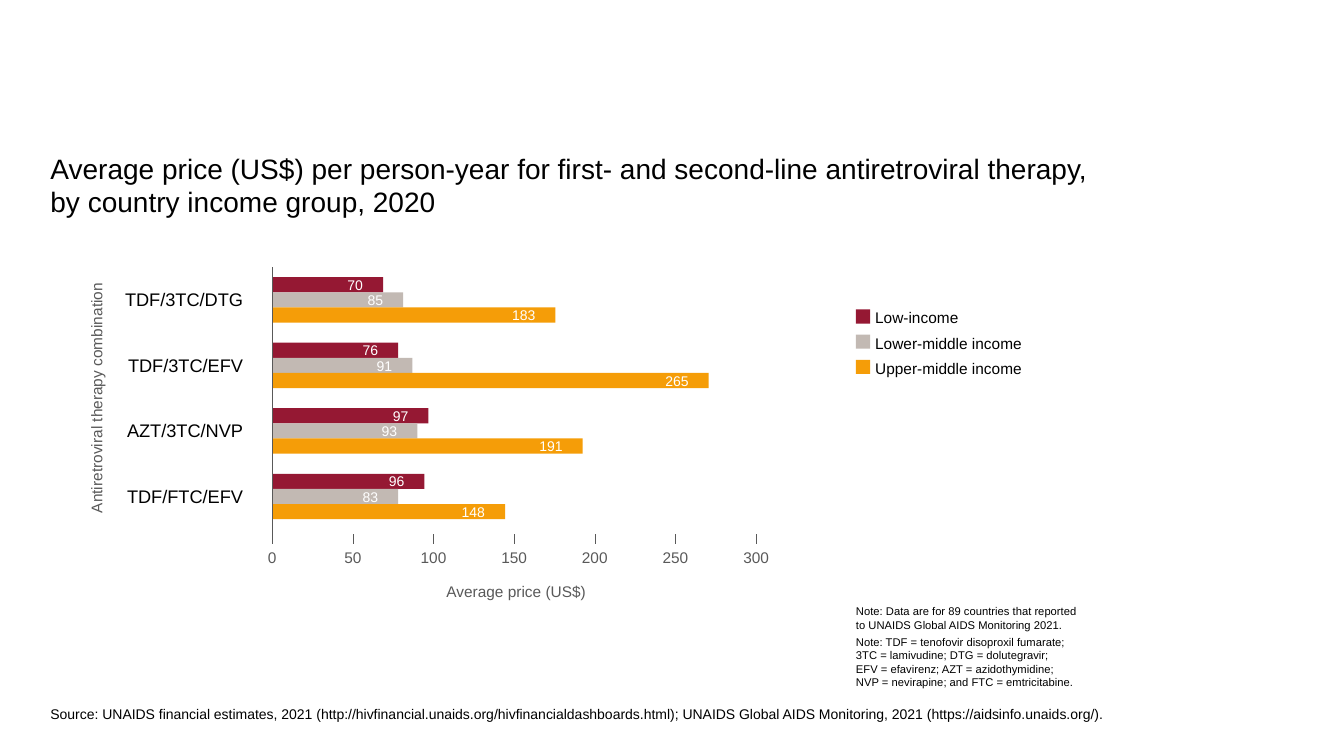
from dataclasses import dataclass

from lxml import etree
from pptx import Presentation
from pptx.dml.color import RGBColor
from pptx.enum.shapes import MSO_CONNECTOR, MSO_SHAPE
from pptx.enum.text import MSO_ANCHOR, MSO_AUTO_SIZE, PP_ALIGN
from pptx.oxml.ns import qn
from pptx.util import Inches, Pt

LEFT, CENTER, RIGHT = PP_ALIGN.LEFT, PP_ALIGN.CENTER, PP_ALIGN.RIGHT
TOP, MIDDLE = MSO_ANCHOR.TOP, MSO_ANCHOR.MIDDLE
RECTANGLE = MSO_SHAPE.RECTANGLE
STRAIGHT = MSO_CONNECTOR.STRAIGHT

FONT = "Arial"
COLORS = {
    "low": "951833",
    "lower_middle": "C2B9B3",
    "upper_middle": "F59D08",
    "text": "000000",
    "axis": "595959",
    "value": "FFFFFF",
}

CELL = 0.05
AXIS_COLUMN = 54
AXIS_TOP, TICK_TOP, AXIS_BOTTOM = 53, 106, 108
TICK_COLUMNS = 16
FIRST_BAR_ROW, CATEGORY_ROWS, BAR_ROWS = 55, 13, 3
LEGEND_ROW, LEGEND_ROWS = 61, 5
SIDE_COLUMN = 169.8


@dataclass(frozen=True)
class Area:
    column: float
    row: float
    columns: float
    rows: float


@dataclass(frozen=True)
class Style:
    size: float
    color: str = "text"
    align: PP_ALIGN = LEFT
    anchor: MSO_ANCHOR = TOP
    spacing: float | None = None
    right_inset: float = 0


@dataclass(frozen=True)
class IncomeGroup:
    name: str
    color: str


@dataclass(frozen=True)
class Therapy:
    name: str
    prices: tuple[int, int, int]
    bar_columns: tuple[float, float, float]


@dataclass(frozen=True)
class Label:
    area: Area
    lines: tuple[str, ...]
    style: Style


TITLE = Label(
    Area(10, 30, 250, 20),
    (
        "Average price (US$) per person-year for first- and second-line antiretroviral therapy,",
        "by country income group, 2020",
    ),
    Style(20),
)
GROUPS = (
    IncomeGroup("Low-income", "low"),
    IncomeGroup("Lower-middle income", "lower_middle"),
    IncomeGroup("Upper-middle income", "upper_middle"),
)
THERAPIES = (
    Therapy("TDF/3TC/DTG", (70, 85, 183), (22, 26, 56.2)),
    Therapy("TDF/3TC/EFV", (76, 91, 265), (25, 27.8, 86.6)),
    Therapy("AZT/3TC/NVP", (97, 93, 191), (31, 28.8, 61.6)),
    Therapy("TDF/FTC/EFV", (96, 83, 148), (30.2, 25, 46.2)),
)
VALUE = Style(10, "value", RIGHT, MIDDLE, right_inset=4)
CATEGORY = Style(13, "text", RIGHT, MIDDLE, 14)
LEGEND = Style(11, spacing=14)
TICK = Style(11, "axis", CENTER, spacing=11)
VERTICAL_TITLE = Label(
    Area(15.2, 55, 7.6, 48),
    ("Antiretroviral therapy combination",),
    Style(11, "axis", CENTER, MIDDLE, 14),
)
LABELS = (
    Label(Area(84.4, 115.4, 36, 3.8), ("Average price (US$)",), Style(11, "axis", CENTER)),
    Label(
        Area(SIDE_COLUMN, 120, 44.8, 5.4),
        ("Note: Data are for 89 countries that reported to UNAIDS Global AIDS Monitoring 2021.",),
        Style(8),
    ),
    Label(
        Area(SIDE_COLUMN, 126, 43.4, 10.8),
        (
            "Note: TDF = tenofovir disoproxil fumarate; 3TC = lamivudine; DTG = dolutegravir;",
            "EFV = efavirenz; AZT = azidothymidine; NVP = nevirapine; and FTC = emtricitabine.",
        ),
        Style(8),
    ),
    Label(
        Area(10, 140, 240, 3.4),
        (
            "Source: UNAIDS financial estimates, 2021 "
            "(http://hivfinancial.unaids.org/hivfinancialdashboards.html); "
            "UNAIDS Global AIDS Monitoring, 2021 (https://aidsinfo.unaids.org/).",
        ),
        Style(10),
    ),
)


def grid(cells: float) -> int:
    return Inches(cells * CELL)


def bounds(area: Area) -> tuple[int, int, int, int]:
    return grid(area.column), grid(area.row), grid(area.columns), grid(area.rows)


def color(name: str) -> RGBColor:
    return RGBColor.from_string(COLORS[name])


def write(shape, lines: tuple[str, ...], style: Style) -> None:
    frame = shape.text_frame
    frame.margin_left = frame.margin_top = frame.margin_bottom = 0
    frame.margin_right = grid(style.right_inset)
    frame.word_wrap = True
    frame.auto_size = MSO_AUTO_SIZE.NONE
    frame.vertical_anchor = style.anchor
    frame.text = "\n".join(lines)
    for paragraph in frame.paragraphs:
        paragraph.alignment = style.align
        if style.spacing:
            paragraph.line_spacing = Pt(style.spacing)
        paragraph.font.name = FONT
        paragraph.font.size = Pt(style.size)
        paragraph.font.color.rgb = color(style.color)


def add_text(page, label: Label):
    box = page.shapes.add_textbox(*bounds(label.area))
    write(box, label.lines, label.style)
    return box


def add_block(page, area: Area, fill: str):
    block = page.shapes.add_shape(RECTANGLE, *bounds(area))
    block.shadow.inherit = False
    block.fill.solid()
    block.fill.fore_color.rgb = color(fill)
    block.line.fill.background()
    return block


def add_rule(page, column: float, top: float, bottom: float) -> None:
    rule = page.shapes.add_connector(STRAIGHT, grid(column), grid(top), grid(column), grid(bottom))
    rule.line.color.rgb = color("axis")
    rule.line.width = Pt(0.25)
    etree.SubElement(rule._element.spPr, qn("a:effectLst"))


def add_title(page) -> None:
    title = page.shapes.title
    title.left, title.top, title.width, title.height = bounds(TITLE.area)
    write(title, TITLE.lines, TITLE.style)


def add_bars(page) -> None:
    for index, therapy in enumerate(THERAPIES):
        row = FIRST_BAR_ROW + index * CATEGORY_ROWS
        add_text(page, Label(Area(20, row + 2.6, 28.2, 4), (therapy.name,), CATEGORY))
        bars = zip(GROUPS, therapy.prices, therapy.bar_columns)
        for order, (group, price, columns) in enumerate(bars):
            area = Area(AXIS_COLUMN, row + order * BAR_ROWS, columns, BAR_ROWS)
            write(add_block(page, area, group.color), (str(price),), VALUE)


def add_axes(page) -> None:
    for index, price in enumerate(range(0, 301, 50)):
        column = AXIS_COLUMN + index * TICK_COLUMNS
        add_rule(page, column, TICK_TOP if index else AXIS_TOP, AXIS_BOTTOM)
        add_text(page, Label(Area(column - 4, 109.4, 8, 3), (str(price),), TICK))
    box = add_text(page, VERTICAL_TITLE)
    box.text_frame._txBody.bodyPr.set("vert", "vert270")


def add_legend(page) -> None:
    for index, group in enumerate(GROUPS):
        row = LEGEND_ROW + index * LEGEND_ROWS
        add_block(page, Area(SIDE_COLUMN, row + 0.4, 2.8, 2.8), group.color)
        add_text(page, Label(Area(SIDE_COLUMN + 3.8, row, 34, 3.6), (group.name,), LEGEND))


def main() -> None:
    deck = Presentation()
    deck.slide_width, deck.slide_height = Inches(13.33), Inches(7.5)
    page = deck.slides.add_slide(deck.slide_layouts[5])
    add_title(page)
    add_bars(page)
    add_axes(page)
    add_legend(page)
    for label in LABELS:
        add_text(page, label)
    deck.save("out.pptx")


if __name__ == "__main__":
    main()
